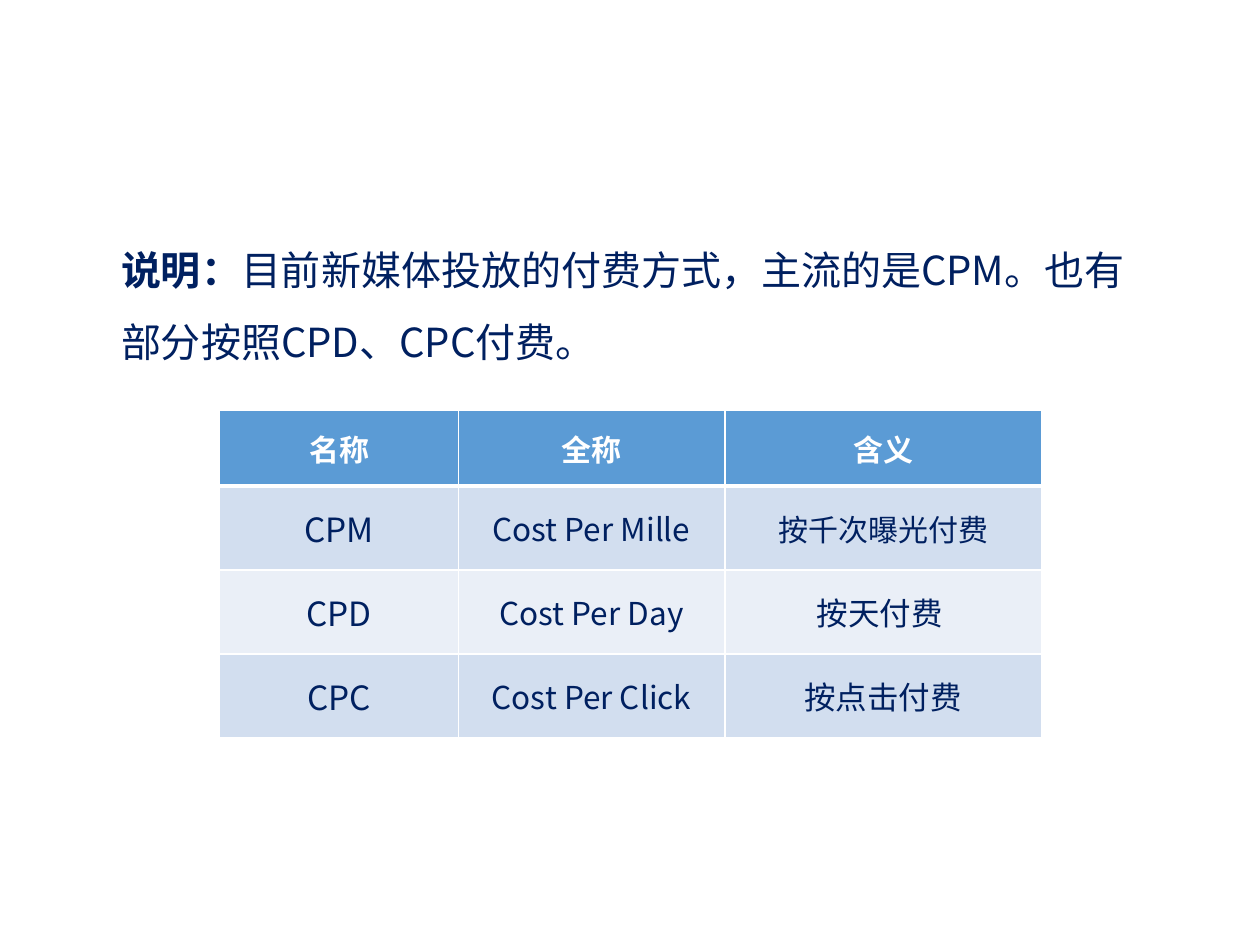
from lxml import etree
from pptx import Presentation
from pptx import util as u
from pptx.dml.color import RGBColor
from pptx.enum import text
from pptx.oxml import ns

NAVY = RGBColor(0x00, 0x20, 0x60)
WHITE = RGBColor(0xFF, 0xFF, 0xFF)
HEADER = RGBColor(0x5B, 0x9B, 0xD5)
BAND_DARK = RGBColor(0xD2, 0xDE, 0xEF)
BAND_LIGHT = RGBColor(0xEA, 0xEF, 0xF7)

SLIDE_HEIGHT = 20 / 2.54
SLIDE_WIDTH = SLIDE_HEIGHT * 4 / 3

INTRO = [
    ("说明：", True),
    ("目前新媒体投放的付费方式，主流的是CPM。也有部分按照CPD、CPC付费。", False),
]
PRICING = [
    [("名称", 18), ("全称", 18), ("含义", 18)],
    [("CPM", 20), ("Cost Per Mille", 18.9), ("按千次曝光付费", 18)],
    [("CPD", 20), ("Cost Per Day", 18.9), ("按天付费 ", 18.9)],
    [("CPC", 20), ("Cost Per Click", 18.9), ("按点击付费", 18.9)],
]
COLUMN_WIDTHS = [1.99, 2.22, 2.64]
ROW_HEIGHTS = [0.63, 0.7, 0.7, 0.7]


class Deck:
    font = "Noto Sans CJK SC"

    def __init__(self, width, height):
        self.prs = Presentation()
        self.prs.slide_width = u.Inches(width)
        self.prs.slide_height = u.Inches(height)
        self.s = self.prs.slides.add_slide(self.prs.slide_layouts[6])

    def run(self, p, words, size, color, bold):
        r = p.add_run()
        r.text = words
        r.font.size = u.Pt(size)
        r.font.bold = bold
        r.font.color.rgb = color
        r.font.name = self.font
        ea = etree.SubElement(r.font._element, ns.qn("a:ea"))
        ea.set("typeface", self.font)

    def paragraph(self, left, top, width, height, runs):
        sp = self.s.shapes.add_textbox(*map(u.Inches, (left, top, width, height)))
        tf = sp.text_frame
        tf.word_wrap = True
        tf.auto_size = text.MSO_AUTO_SIZE.SHAPE_TO_FIT_TEXT
        p = tf.paragraphs[0]
        p.line_spacing = 1.5
        for words, bold in runs:
            self.run(p, words, 24, NAVY, bold)

    def borders(self, cell, top, bottom):
        tc_pr = cell._tc.get_or_add_tcPr()
        for side, width in (("L", 1), ("R", 1), ("T", top), ("B", bottom)):
            ln = etree.SubElement(tc_pr, ns.qn(f"a:ln{side}"), w=str(u.Pt(width)))
            fill = etree.SubElement(ln, ns.qn("a:solidFill"))
            etree.SubElement(fill, ns.qn("a:srgbClr"), val=str(WHITE))

    def cell(self, cell, row, words, size):
        header = row == 0
        self.borders(cell, 3 if row == 1 else 1, 3 if header else 1)
        cell.fill.solid()
        band = BAND_DARK if row % 2 else BAND_LIGHT
        cell.fill.fore_color.rgb = HEADER if header else band
        cell.vertical_anchor = text.MSO_ANCHOR.MIDDLE
        p = cell.text_frame.paragraphs[0]
        p.alignment = text.PP_ALIGN.CENTER
        self.run(p, words, size, WHITE if header else NAVY, header)

    def table(self, left, top, widths, heights, rows):
        box = (left, top, sum(widths), sum(heights))
        table = self.s.shapes.add_table(
            len(heights), len(widths), *map(u.Inches, box)
        ).table
        for column, width in zip(table.columns, widths):
            column.width = u.Inches(width)
        for i, (height, row) in enumerate(zip(heights, rows)):
            table.rows[i].height = u.Inches(height)
            for j, (words, size) in enumerate(row):
                self.cell(table.cell(i, j), i, words, size)


def main():
    deck = Deck(SLIDE_WIDTH, SLIDE_HEIGHT)
    deck.paragraph(0.91, 1.8, 8.69, 1.92, INTRO)
    deck.table(1.83, 3.42, COLUMN_WIDTHS, ROW_HEIGHTS, PRICING)
    deck.prs.save("out.pptx")


if __name__ == "__main__":
    main()
